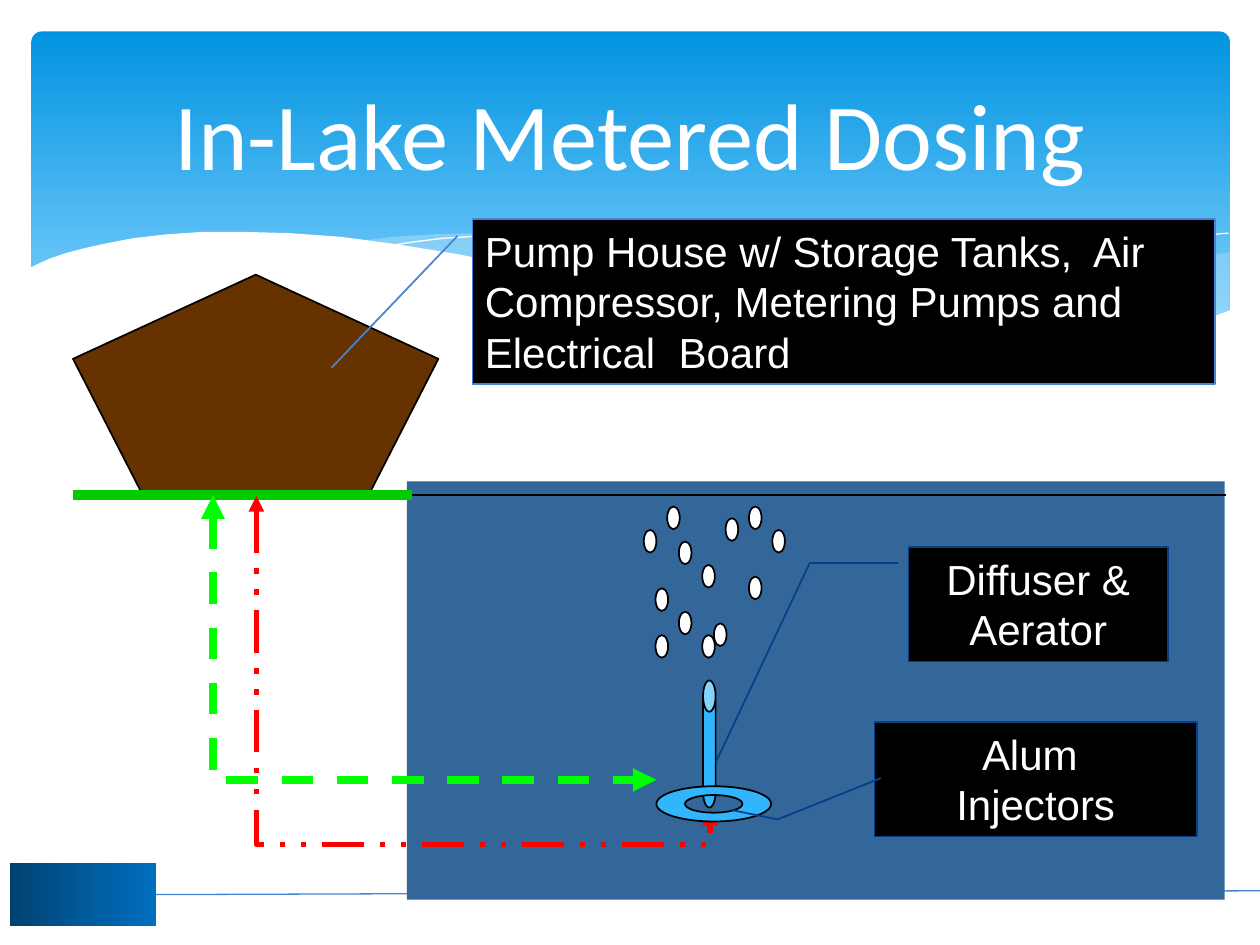
import math

from lxml import etree
from pptx import Presentation
from pptx.dml.color import RGBColor
from pptx.enum.dml import MSO_LINE
from pptx.enum.shapes import MSO_CONNECTOR, MSO_SHAPE
from pptx.enum.text import MSO_ANCHOR, MSO_AUTO_SIZE, PP_ALIGN
from pptx.oxml.ns import qn
from pptx.util import Inches, Pt

STRAIGHT, ELBOW = MSO_CONNECTOR.STRAIGHT, MSO_CONNECTOR.ELBOW
RECTANGLE, OVAL, CAN = MSO_SHAPE.RECTANGLE, MSO_SHAPE.OVAL, MSO_SHAPE.CAN
PENTAGON, ROUNDED = MSO_SHAPE.REGULAR_PENTAGON, MSO_SHAPE.ROUNDED_RECTANGLE
CALLOUT_1, CALLOUT_2 = MSO_SHAPE.LINE_CALLOUT_1, MSO_SHAPE.LINE_CALLOUT_2
DASH, DASH_DOT_DOT = MSO_LINE.DASH, MSO_LINE.DASH_DOT_DOT
LEFT, CENTER = PP_ALIGN.LEFT, PP_ALIGN.CENTER
TOP, MIDDLE = MSO_ANCHOR.TOP, MSO_ANCHOR.MIDDLE
FIT_SHAPE = MSO_AUTO_SIZE.SHAPE_TO_FIT_TEXT

WAVE_RIGHT = [
    (9.76, 2), (9.35, 2.07), (8.91, 2.16), (8.32, 2.3), (7.79, 2.42), (7.29, 2.53),
    (6.61, 2.65), (7.05, 2.71), (7.45, 2.75), (7.81, 2.77), (8.14, 2.78), (8.54, 2.76),
    (8.89, 2.72), (9.21, 2.65), (9.49, 2.57), (9.76, 2.47)]
WAVE_MIDDLE = [
    (8.93, 2.73), (8.37, 2.65), (7.75, 2.54), (7.06, 2.4), (6.29, 2.22), (5.84, 2.11),
    (5.41, 2.03), (5.02, 1.96), (4.65, 1.91), (4.2, 1.87), (3.8, 1.85), (3.44, 1.86),
    (3.13, 1.88), (2.86, 1.91), (3.42, 1.99), (4.04, 2.11), (4.49, 2.22), (5.3, 2.4),
    (6.01, 2.55), (6.65, 2.66), (7.22, 2.74), (7.73, 2.77), (8.18, 2.78), (8.57, 2.77)]
CREST_LEFT = [
    (3.09, 1.95), (3.28, 1.92), (3.53, 1.89), (3.87, 1.87), (4.33, 1.87), (4.89, 1.9),
    (5.33, 1.94), (5.82, 2), (6.36, 2.08), (6.95, 2.19), (7.6, 2.33), (8.31, 2.51),
    (9.07, 2.72)]
CREST_RIGHT = [
    (6.13, 2.57), (6.53, 2.46), (6.95, 2.35), (7.48, 2.23), (8.06, 2.1), (8.66, 1.99),
    (9.1, 1.92), (9.51, 1.87), (9.75, 1.85)]
WAVE_FRONT = [
    (9.77, 2.46), (9.5, 2.56), (9.2, 2.65), (8.87, 2.71), (8.5, 2.75), (8.09, 2.77),
    (7.61, 2.75), (7.08, 2.7), (6.48, 2.62), (5.79, 2.5), (5.29, 2.39), (4.75, 2.27),
    (4.18, 2.13), (3.65, 2.02), (3.16, 1.94), (2.71, 1.88), (2.3, 1.85), (1.93, 1.84),
    (1.61, 1.84), (1.32, 1.86), (1.06, 1.89), (0.85, 1.93), (0.67, 1.97), (0.52, 2.01),
    (0.4, 2.05), (0.29, 2.1), (0.23, 2.13), (0.23, 3.29), (9.77, 3.29)]
BUBBLE_CELLS = [
    (2, 0), (9, 0), (7, 1), (0, 2), (11, 2), (3, 3), (5, 5), (9, 6), (1, 7), (3, 9),
    (6, 10), (1, 11), (5, 11)]


def color(hex_string):
    """Turn a hex string into a colour."""
    return RGBColor.from_string(hex_string)


def paint(shape, fill=None, line=None, width=1, opacity=None):
    """Set fill, outline and opacity of a shape and take its shadow away."""
    shape.shadow.inherit = False
    if fill:
        shape.fill.solid()
        shape.fill.fore_color.rgb = color(fill)
    else:
        shape.fill.background()
    if opacity:
        tint = shape.element.spPr.find(qn("a:solidFill"))[0]
        etree.SubElement(tint, qn("a:alpha"), val=str(opacity * 1000))
    if line:
        shape.line.color.rgb = color(line)
        shape.line.width = Pt(width)
    else:
        shape.line.fill.background()
    return shape


def add_shape(slide, kind, box, **style):
    """Add a painted preset shape in a box of inches."""
    return paint(slide.shapes.add_shape(kind, *map(Inches, box)), **style)


def shade(shape, angle, *stops):
    """Fill a shape with a two-stop gradient."""
    shape.fill.gradient()
    shape.fill.gradient_angle = angle
    for stop, (position, tint) in zip(shape.fill.gradient_stops, stops):
        stop.position = position
        stop.color.rgb = color(tint)


def add_outline(slide, contours, closed=True, **style):
    """Add a freeform made of one or more contours in inches."""
    contours = [[(Inches(x), Inches(y)) for x, y in contour] for contour in contours]
    builder = slide.shapes.build_freeform(*contours[0][0])
    for number, contour in enumerate(contours):
        if number:
            builder.move_to(*contour[0])
        builder.add_line_segments(contour[1:], close=closed)
    return paint(builder.convert_to_shape(), **style)


def add_line(slide, kind, start, end, tint, width, dash=None):
    """Add a connector between two points in inches."""
    line = slide.shapes.add_connector(kind, *map(Inches, start + end))
    line.line.color.rgb = color(tint)
    line.line.width = Pt(width)
    if dash:
        line.line.dash_style = dash
    etree.SubElement(line.element.spPr, qn("a:effectLst"))
    return line


def write(shape, *paragraphs, size=24, font="Arial", align=CENTER, anchor=TOP, fit=None):
    """Write paragraphs into a shape in one format."""
    frame = shape.text_frame
    frame.word_wrap = True
    frame.vertical_anchor = anchor
    if fit is not None:
        frame.auto_size = fit
    for number, text in enumerate(paragraphs):
        paragraph = frame.add_paragraph() if number else frame.paragraphs[0]
        paragraph.alignment = align
        run = paragraph.add_run()
        run.text = text
        run.font.size = Pt(size)
        run.font.name = font
        run.font.color.rgb = color("FFFFFF")


def draw_header(slide, left, top):
    """Draw the sky band with its waves and put the title on it."""
    def shift(points):
        return [[(left + x, top + y) for x, y in points]]

    sky = add_shape(slide, ROUNDED, (left + 0.25, top + 0.25, 9.51, 2.7))
    sky.adjustments[0] = 0.03
    shade(sky, 270, (0, "0293E0"), (0.9, "83D3FE"))
    add_outline(slide, shift(WAVE_RIGHT), fill="C6E7FC", opacity=29)
    add_outline(slide, shift(WAVE_MIDDLE), fill="C6E7FC", opacity=40)
    for crest in (CREST_LEFT, CREST_RIGHT):
        add_outline(slide, shift(crest), closed=False, line="FFFFFF", width=0)
    add_outline(slide, shift(WAVE_FRONT), fill="FFFFFF")

    title = slide.shapes.title
    title.element.getparent().append(title.element)
    title.left, title.top = Inches(left + 0.5), Inches(top + 0.37)
    title.width, title.height = Inches(9), Inches(1.37)
    write(title, "In-Lake Metered Dosing", size=54, font="Calibri", anchor=MIDDLE)


def draw_footer(slide, left, top):
    """Draw the footer block and the rule that leaves it."""
    block = add_shape(slide, RECTANGLE, (left, top, 1.16, 0.5))
    shade(block, 0, (0, "004272"), (1, "0070C0"))
    rule = add_line(slide, STRAIGHT, (left + 1.16, top + 0.25), (10, top + 0.22), "4584D3", 0.75)
    rule.begin_connect(block, 3)


def draw_site(slide, left, top):
    """Draw the lake, the pump house on the shore and the diffuser tube."""
    shore = top + 1.75
    add_shape(slide, RECTANGLE, (left + 2.65, top + 1.64, 6.49, 3.32), fill="336699")
    add_shape(slide, PENTAGON, (left, top, 2.9, 1.75), fill="663300", line="000000")
    tube = add_shape(slide, CAN, (left + 5, top + 3.22, 0.1, 1.01), fill="31B6FD", line="000000")
    tube.adjustments[0] = 2.49
    add_line(slide, STRAIGHT, (left + 1.95, shore), (left + 9.15, shore), "000000", 1)
    add_line(slide, STRAIGHT, (left, shore), (left + 2.69, shore), "00CC00", 6)


def draw_pipe(slide, box, tint, width, dash, preset, bend=None):
    """Draw a dashed elbow pipe, turned to start downwards, with two arrowheads."""
    left, top, across, down = box
    pipe = add_line(slide, ELBOW, (left + across, top), (left, top + down), tint, width, dash)
    pipe.rotation = 270
    geometry = pipe.element.spPr.find(qn("a:prstGeom"))
    geometry.set("prst", preset)
    if bend:
        guides = geometry.find(qn("a:avLst"))
        if guides is None:
            guides = etree.SubElement(geometry, qn("a:avLst"))
        etree.SubElement(guides, qn("a:gd"), name="adj1", fmla=f"val {bend}")
    for end in ("a:headEnd", "a:tailEnd"):
        etree.SubElement(pipe.element.spPr.find(qn("a:ln")), qn(end), type="triangle")


def draw_callout(slide, kind, box, leader, *paragraphs, line="073E87", align=CENTER):
    """Draw a black label with a leader line."""
    label = add_shape(slide, kind, box, fill="000000", line=line)
    for number, value in enumerate(leader):
        label.adjustments[number] = value
    write(label, *paragraphs, align=align, fit=FIT_SHAPE)


def draw_bubbles(slide, left, top):
    """Scatter air bubbles over the cells of a square grid."""
    pitch = 1.02 / 11
    for column, row in BUBBLE_CELLS:
        box = (left + column * pitch, top + row * pitch, 0.1, 0.18)
        add_shape(slide, OVAL, box, fill="FFFFFF", line="000000")


def draw_injector_ring(slide, left, top, width, height):
    """Draw the oval injector ring with a hole half its size."""
    def ellipse(scale, direction):
        angles = [direction * math.radians(step) for step in range(0, 360, 5)]
        return [(left + width / 2 * (1 + scale * math.cos(angle)),
                 top + height / 2 * (1 + scale * math.sin(angle))) for angle in angles]

    add_outline(slide, [ellipse(1, 1), ellipse(0.5, -1)], fill="31B6FD", line="000000")


def main():
    """Build the slide and save it."""
    deck = Presentation()
    deck.slide_width, deck.slide_height = Inches(10), Inches(7.5)
    slide = deck.slides.add_slide(deck.slide_layouts[5])
    draw_header(slide, 0, 0)
    draw_footer(slide, 0.08, 6.85)
    draw_site(slide, 0.58, 2.18)
    draw_pipe(slide, (2.59, 3.38, 2.49, 3.6), "FF0000", 3, DASH_DOT_DOT,
              "bentConnector3", bend=111100)
    draw_pipe(slide, (2.32, 3.3, 2.26, 3.52), "00FF00", 4.5, DASH, "bentConnector2")
    draw_callout(slide, CALLOUT_2, (7.21, 4.34, 2.06, 0.91),
                 (0.14, -0.04, 0.14, -0.38, 1.87, -0.74), "Diffuser & Aerator")
    draw_callout(slide, CALLOUT_1, (3.75, 1.74, 5.89, 1.31), (0.1, -0.02, 0.9, -0.19),
                 "Pump House w/ Storage Tanks,  Air Compressor, Metering Pumps and "
                 "Electrical  Board", line="4584D3", align=LEFT)
    draw_bubbles(slide, 5.11, 4.02)
    draw_injector_ring(slide, 5.21, 6.24, 0.91, 0.28)
    draw_callout(slide, CALLOUT_2, (6.94, 5.73, 2.56, 0.91),
                 (0.49, 0.02, 0.85, -0.3, 0.77, -0.44), "Alum ", "Injectors")
    deck.save("out.pptx")


if __name__ == "__main__":
    main()
